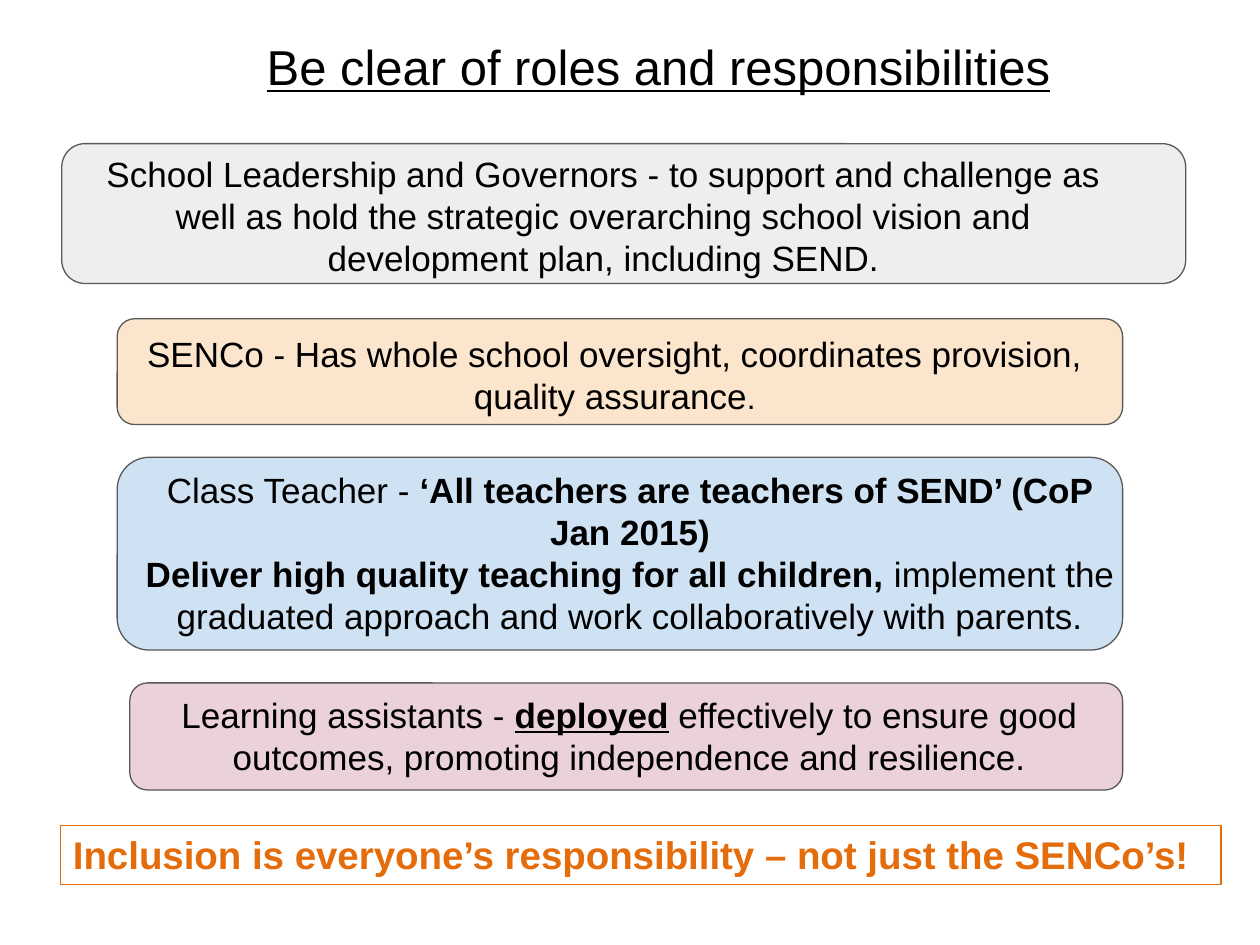
"""Build a slide on the roles and responsibilities around SEND in a school."""
from pptx import Presentation
from pptx.dml.color import RGBColor
from pptx.enum import shapes, text
from pptx.util import Inches, Pt

BLACK = RGBColor(0x00, 0x00, 0x00)
WHITE = RGBColor(0xFF, 0xFF, 0xFF)
EDGE = RGBColor(0x59, 0x59, 0x59)
GREY = RGBColor(0xEE, 0xEE, 0xEE)
PEACH = RGBColor(0xFC, 0xE5, 0xCD)
BLUE = RGBColor(0xCF, 0xE2, 0xF3)
PINK = RGBColor(0xEA, 0xD1, 0xDC)
ORANGE = RGBColor(0xE4, 0x6C, 0x0A)

TITLE = "Be clear of roles and responsibilities"
CLOSING = "Inclusion is everyone’s responsibility – not just the SENCo’s!"
BOLD = {"bold": True}
ROLES = [
    {"fill": GREY, "card": (0.49, 1.14, 8.92, 1.11), "label": (0.53, 1.11, 8.52, 1.14),
     "lines": [[("School Leadership and Governors - to support and challenge as well as hold "
                 "the strategic overarching school vision and development plan, "
                 "including SEND.", {})]]},
    {"fill": PEACH, "card": (0.93, 2.53, 7.98, 0.84), "label": (1.03, 2.54, 7.7, 0.82),
     "lines": [[("SENCo - Has whole school oversight, coordinates provision, "
                 "quality assurance", {}), (".", {"size": 18})]]},
    {"fill": BLUE, "card": (0.93, 3.63, 7.98, 1.53), "label": (1.01, 3.62, 7.98, 1.28),
     "lines": [[("Class Teacher - ", {}),
                ("‘All teachers are teachers of SEND’ (CoP Jan 2015)", BOLD)],
               [("Deliver high quality teaching for all children,", BOLD),
                (" implement the graduated approach and work collaboratively "
                 "with parents.", {})]]},
    {"fill": PINK, "card": (1.03, 5.42, 7.88, 0.85), "label": (1.22, 5.4, 7.55, 0.82),
     "lines": [[("Learning assistants - ", {}),
                ("deployed", {"bold": True, "underline": True}),
                (" effectively to ensure good outcomes, promoting independence "
                 "and resilience.", {})]]},
]


def write(shape, lines, size=20, color=BLACK, align=text.PP_ALIGN.CENTER, pad=0.1):
    frame = shape.text_frame
    frame.word_wrap = True
    frame.auto_size = text.MSO_AUTO_SIZE.NONE
    frame.vertical_anchor = text.MSO_ANCHOR.TOP
    frame.margin_left = frame.margin_right = Inches(0.1)
    frame.margin_top = frame.margin_bottom = Inches(pad)
    for i, line in enumerate(lines):
        para = frame.add_paragraph() if i else frame.paragraphs[0]
        para.alignment = align
        for words, look in line:
            run = para.add_run()
            run.text = words
            font = run.font
            font.name = "Arial"
            font.size = Pt(look.get("size", size))
            font.bold = look.get("bold", False)
            font.underline = look.get("underline", False)
            font.color.rgb = color


def add_card(slide, kind, box, fill, edge):
    card = slide.shapes.add_shape(kind, *map(Inches, box))
    card.shadow.inherit = False
    card.fill.solid()
    card.fill.fore_color.rgb = fill
    card.line.color.rgb = edge
    card.line.width = Pt(0.75)
    return card


def main():
    deck = Presentation()
    deck.slide_width, deck.slide_height = Inches(10), Inches(7.5)
    slide = deck.slides.add_slide(deck.slide_layouts[5])

    title = slide.shapes.title
    title.left, title.top, title.width, title.height = map(Inches, (0.42, 0.19, 9.11, 0.84))
    write(title, [[(TITLE, {"underline": True})]], size=28)
    title.text_frame.paragraphs[0]._p.get_or_add_pPr().set("marL", str(Inches(0.5)))

    for role in ROLES:
        add_card(slide, shapes.MSO_SHAPE.ROUNDED_RECTANGLE, role["card"], role["fill"], EDGE)
        label = slide.shapes.add_textbox(*map(Inches, role["label"]))
        write(label, role["lines"])

    banner = add_card(slide, shapes.MSO_SHAPE.RECTANGLE, (0.48, 6.55, 9.21, 0.47), WHITE, ORANGE)
    write(banner, [[(CLOSING, BOLD)]], size=22, color=ORANGE,
          align=text.PP_ALIGN.LEFT, pad=0.05)
    deck.save("out.pptx")


if __name__ == "__main__":
    main()
